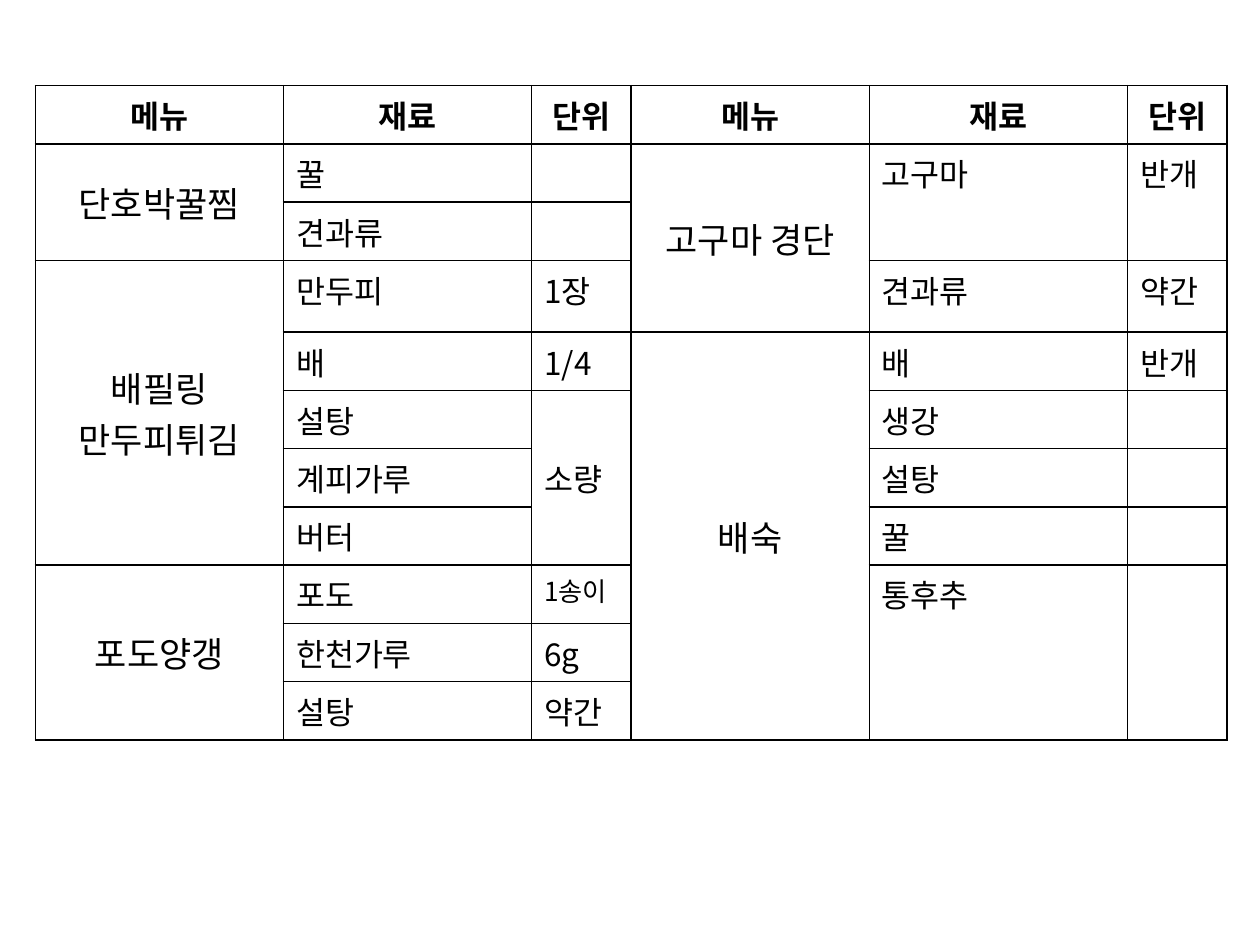
from lxml import etree
from pptx import Presentation
from pptx import util as u
from pptx.dml.color import RGBColor
from pptx.enum import text
from pptx.oxml import ns

FONT = "Noto Sans CJK KR"
INK = "000000"
COLS = [1.97, 1.97, 0.79, 1.89, 2.05, 0.79]
ROWS = [0.46] * 3 + [0.57] + [0.46] * 7
HEADINGS = ["메뉴", "재료", "단위"] * 2
MENUS = [
    (1, 0, 2, "단호박꿀찜"),
    (3, 0, 5, "배필링\n만두피튀김"),
    (8, 0, 3, "포도양갱"),
    (1, 3, 3, "고구마 경단"),
    (4, 3, 7, "배숙"),
]
INGREDIENTS = {
    1: ["꿀", "견과류", "만두피", "배", "설탕", "계피가루", "버터",
        "포도", "한천가루", "설탕"],
    4: ["고구마", "", "견과류", "배", "생강", "설탕", "꿀", "통후추"],
}
UNITS = [
    (3, 2, "1장"), (4, 2, "1/4"), (9, 2, "6g"), (10, 2, "약간"),
    (1, 5, "반개"), (3, 5, "약간"),
]
MERGES = [(1, 4, 2), (1, 5, 2), (5, 2, 3), (8, 4, 3), (8, 5, 3)]


def rgb(value):
    return RGBColor.from_string(value)


def set_attrs(obj, values):
    for name, value in values.items():
        setattr(obj, name, value)


def add_borders(cell, color, width):
    tc_pr = cell._tc.get_or_add_tcPr()
    for side in ("lnL", "lnR", "lnT", "lnB"):
        ln = etree.SubElement(tc_pr, ns.qn(f"a:{side}"), w=str(u.Pt(width)))
        fill = etree.SubElement(ln, ns.qn("a:solidFill"))
        etree.SubElement(fill, ns.qn("a:srgbClr"), val=color)


def write_cell(cell, words, size=18, bold=False, center=False, middle=False):
    if middle:
        cell.vertical_anchor = text.MSO_ANCHOR.MIDDLE
    tf = cell.text_frame
    tf.text = words
    for p in tf.paragraphs:
        p.alignment = text.PP_ALIGN.CENTER if center else text.PP_ALIGN.LEFT
        for r in p.runs:
            set_attrs(r.font, {"name": FONT, "size": u.Pt(size), "bold": bold})
            r.font.color.rgb = rgb(INK)
            ea = etree.SubElement(r.font._element, ns.qn("a:ea"))
            ea.set("typeface", FONT)


def merge_down(table, row, col, count):
    table.cell(row, col).merge(table.cell(row + count - 1, col))


def add_grid(s):
    frame = s.shapes.add_table(
        len(ROWS), len(COLS), u.Inches(0.28), u.Inches(0.68),
        u.Inches(sum(COLS)), u.Inches(sum(ROWS)))
    table = frame.table
    set_attrs(table, {"first_row": False, "horz_banding": False})
    for column, width in zip(table.columns, COLS):
        column.width = u.Inches(width)
    for row, height in zip(table.rows, ROWS):
        row.height = u.Inches(height)
    for cell in table.iter_cells():
        add_borders(cell, INK, 1)
        cell.fill.background()
    return table


def fill_menu(table):
    for col, heading in enumerate(HEADINGS):
        write_cell(table.cell(0, col), heading, bold=True, center=True)
    for row, col, count, name in MENUS:
        merge_down(table, row, col, count)
        write_cell(table.cell(row, col), name, 20, center=True, middle=True)
    for merge in MERGES:
        merge_down(table, *merge)
    for col, names in INGREDIENTS.items():
        for row, name in enumerate(names, 1):
            if name:
                write_cell(table.cell(row, col), name)
    for row, col, unit in UNITS:
        write_cell(table.cell(row, col), unit)
    write_cell(table.cell(4, 5), "반개", middle=True)
    write_cell(table.cell(5, 2), "소량", middle=True)
    write_cell(table.cell(8, 2), "1송이", 15)


def main():
    prs = Presentation()
    set_attrs(prs, {"slide_width": u.Inches(10), "slide_height": u.Inches(7.5)})
    s = prs.slides.add_slide(prs.slide_layouts[6])
    fill_menu(add_grid(s))
    prs.save("out.pptx")


if __name__ == "__main__":
    main()
